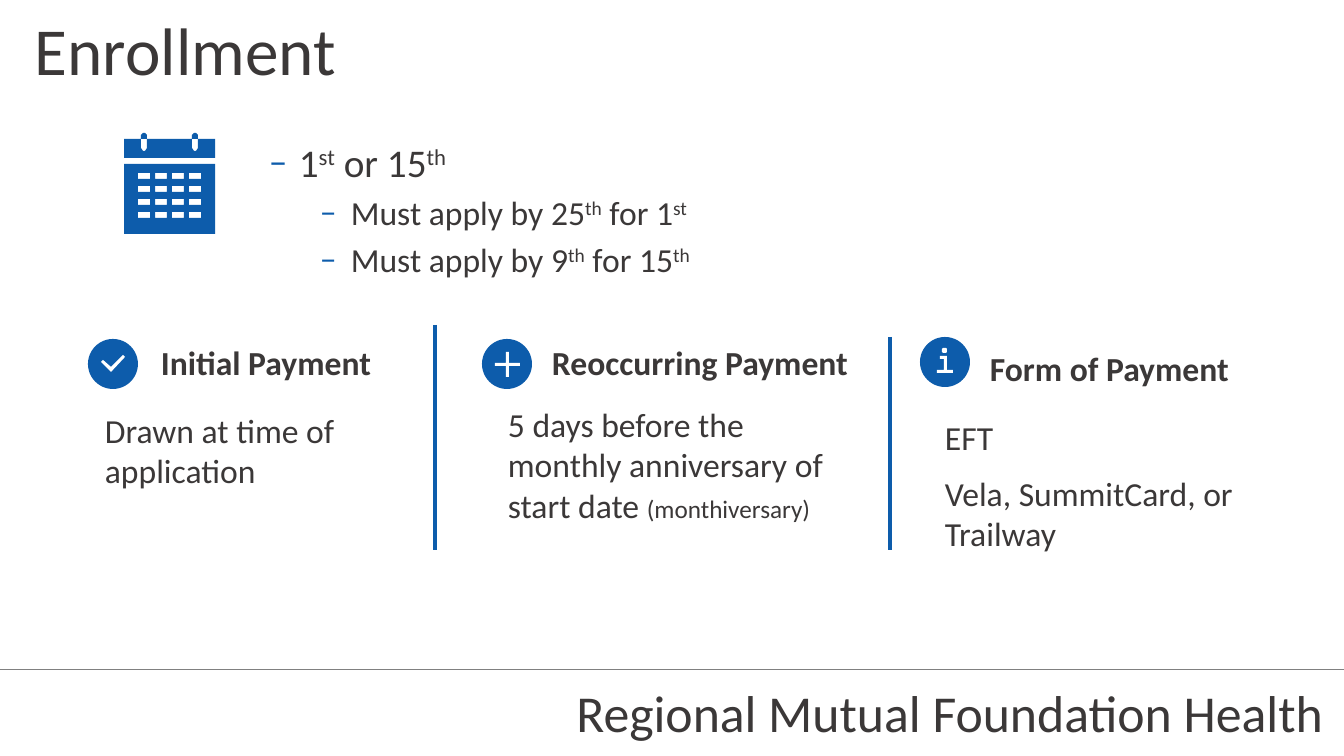
"""Build the Enrollment slide with start dates and three payment columns."""
from dataclasses import dataclass

from lxml.etree import SubElement
from pptx import Presentation
from pptx.dml.color import RGBColor
from pptx.enum.shapes import MSO_CONNECTOR, MSO_SHAPE
from pptx.enum.text import MSO_ANCHOR, PP_ALIGN
from pptx.oxml.ns import qn
from pptx.util import Emu, Pt


@dataclass(frozen=True)
class Theme:
    font: str = "Calibri"
    ink: str = "3B3838"
    blue: str = "0D5CAB"
    grey: str = "808080"
    white: str = "FFFFFF"
    title: int = 48
    footer: int = 37
    lead: int = 28
    body: int = 24
    small: int = 18


T = Theme()
PX = 914400 / 100.8
WIDTH, HEIGHT = 1344, 756
ICON = 50

TITLE = ("Enrollment", (25, -14, 1210, 126))
FOOTER = ("Regional Mutual Foundation Health", (539, 649, 794, 126))
FOOTER_RULE = (0, 669, WIDTH, 669)
DIVIDERS = [(435, 325, 435, 550), (890, 337, 890, 550)]

DATES_BOX = (259, 133, 999, 133)
DATES = [
    {"parts": ["1", "st", " or 15", "th"], "size": T.lead, "left": 30, "hang": 30, "bullet": 95},
    {"parts": ["Must apply by 25", "th", " for 1", "st"], "size": T.body, "left": 82, "hang": 31, "bullet": 100},
    {"parts": ["Must apply by 9", "th", " for 15", "th"], "size": T.body, "left": 82, "hang": 31, "bullet": 100},
]

CHECK = [[(35, 16), (23, 28), (15, 21), (13, 23), (23, 33), (37, 18)]]
PLUS = [[(24, 13), (27, 13), (27, 24), (38, 24), (38, 27), (27, 27),
         (27, 38), (24, 38), (24, 27), (13, 27), (13, 24), (24, 24)]]
INFO = [[(20, 19), (27, 19), (27, 33), (33, 33), (33, 36), (17, 36), (17, 33), (24, 33), (24, 22), (20, 22)],
        [(23, 11), (26, 11), (27, 12), (27, 15), (26, 16), (23, 16), (22, 15), (22, 12)]]

COLUMNS = [
    {"icon": (88, 339), "glyph": CHECK,
     "head": "Initial Payment", "head_box": (151, 337, 253, 50),
     "body": [[("Drawn at time of application", T.body)]], "body_box": (95, 405, 286, 92)},
    {"icon": (482, 339), "glyph": PLUS,
     "head": "Reoccurring Payment", "head_box": (542, 337, 346, 50),
     "body": [[("5 days before the monthly anniversary of start date ", T.body), ("(monthiversary)", T.small)]],
     "body_box": (498, 399, 348, 132)},
    {"icon": (920, 337), "glyph": INFO,
     "head": "Form of Payment", "head_box": (980, 343, 277, 50),
     "body": [[("EFT", T.body)], [("Vela, SummitCard, or Trailway", T.body)]], "body_box": (935, 412, 345, 147)},
]


def px(n):
    return Emu(round(n * PX))


def paint(sp, color):
    sp.shadow.inherit = False
    sp.fill.solid()
    sp.fill.fore_color.rgb = RGBColor.from_string(color)
    sp.line.fill.background()


def add_outline(s, contours, color, dx=0, dy=0):
    moved = [[(x + dx, y + dy) for x, y in c] for c in contours]
    fb = s.shapes.build_freeform(*moved[0][0], scale=PX)
    for i, contour in enumerate(moved):
        if i:
            fb.move_to(*contour[0])
        fb.add_line_segments(contour[1:], close=True)
    paint(fb.convert_to_shape(), color)


def rect(x, y, w, h):
    return [(x, y), (x + w, y), (x + w, y + h), (x, y + h)]


def add_calendar(s):
    contours = [rect(124, 139, 91, 19), rect(124, 164, 91, 70)]
    for x in (141, 192):
        contours.append([(x, 139), (x, 135), (x + 2, 133), (x + 4, 133), (x + 6, 135), (x + 6, 139)])
        contours.append([(x, 139), (x, 148), (x + 2, 151), (x + 4, 151), (x + 6, 148), (x + 6, 139)])
    for row in range(4):
        for col in range(4):
            x, y = 138 + 17 * col, 173 + 13 * row
            contours.append(rect(x, y, 12, 6)[::-1])
    add_outline(s, contours, T.blue)


def add_rule(s, ends, color, width):
    line = s.shapes.add_connector(MSO_CONNECTOR.STRAIGHT, *map(px, ends))
    line.line.color.rgb = RGBColor.from_string(color)
    line.line.width = Pt(width)
    SubElement(line._element.spPr, qn("a:effectLst"))


def add_box(s, box, anchor=MSO_ANCHOR.TOP):
    tf = s.shapes.add_textbox(*map(px, box)).text_frame
    tf.word_wrap = True
    tf.vertical_anchor = anchor
    return tf


def add_run(p, text, size, bold=False):
    r = p.add_run()
    r.text = text
    r.font.name = T.font
    r.font.size = Pt(size)
    r.font.bold = bold
    r.font.color.rgb = RGBColor.from_string(T.ink)
    return r


def next_paragraph(tf, i, gap):
    p = tf.add_paragraph() if i else tf.paragraphs[0]
    if i:
        p.space_before = Pt(gap)
    return p


def add_dates(s):
    tf = add_box(s, DATES_BOX)
    for i, item in enumerate(DATES):
        p = next_paragraph(tf, i, 5)
        pPr = p._p.get_or_add_pPr()
        pPr.set("marL", str(px(item["left"])))
        pPr.set("indent", str(-px(item["hang"])))
        SubElement(SubElement(pPr, qn("a:buClr")), qn("a:srgbClr"), val=T.blue)
        SubElement(pPr, qn("a:buSzPct"), val=str(item["bullet"] * 1000))
        SubElement(pPr, qn("a:buFont"), typeface=T.font)
        SubElement(pPr, qn("a:buChar"), char="–")
        for k, text in enumerate(item["parts"]):
            r = add_run(p, text, item["size"])
            if k % 2:
                r._r.get_or_add_rPr().set("baseline", "30000")


def add_column(s, column):
    x, y = column["icon"]
    paint(s.shapes.add_shape(MSO_SHAPE.OVAL, *map(px, (x, y, ICON, ICON))), T.blue)
    add_outline(s, column["glyph"], T.white, x, y)
    add_run(add_box(s, column["head_box"]).paragraphs[0], column["head"], T.body, bold=True)
    tf = add_box(s, column["body_box"])
    for i, runs in enumerate(column["body"]):
        p = next_paragraph(tf, i, 11)
        for text, size in runs:
            add_run(p, text, size)


def main():
    prs = Presentation()
    prs.slide_width, prs.slide_height = px(WIDTH), px(HEIGHT)
    s = prs.slides.add_slide(prs.slide_layouts[6])
    add_rule(s, FOOTER_RULE, T.grey, 0.5)
    for (text, box), size, align in ((FOOTER, T.footer, PP_ALIGN.RIGHT), (TITLE, T.title, PP_ALIGN.LEFT)):
        p = add_box(s, box, MSO_ANCHOR.MIDDLE).paragraphs[0]
        p.alignment = align
        add_run(p, text, size)
    add_calendar(s)
    add_dates(s)
    for ends in DIVIDERS:
        add_rule(s, ends, T.blue, 3)
    for column in COLUMNS:
        add_column(s, column)
    prs.save("out.pptx")


if __name__ == "__main__":
    main()
